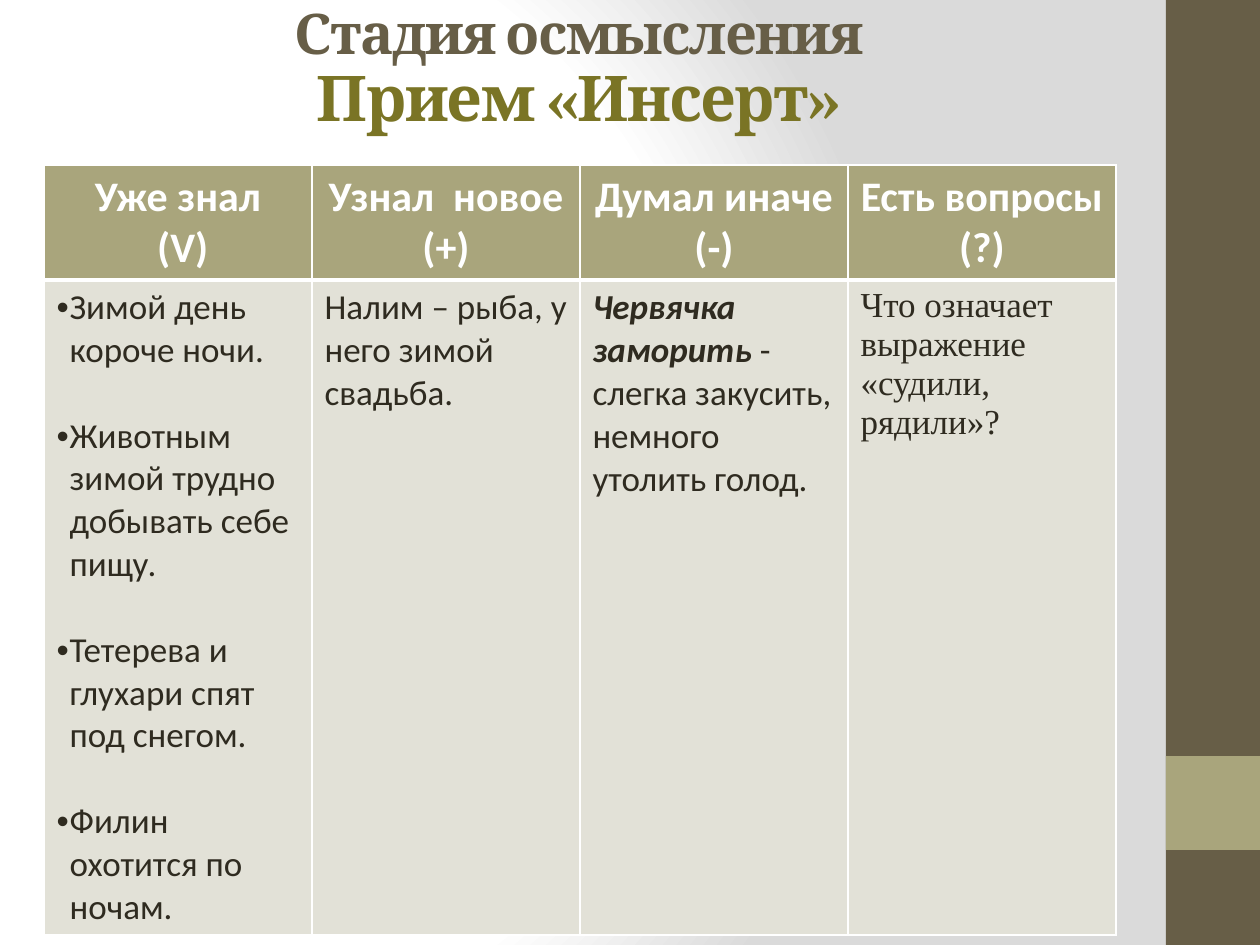
from pptx import Presentation, oxml
from pptx import util as u
from pptx.dml.color import RGBColor
from pptx.enum import shapes, text
from pptx.oxml import ns

SCALE = 914400 / 126
DARK, OLIVE, GREEN = "675E47", "A9A57C", "7A7425"
PALE, INK, WHITE = "E2E1D7", "2F2B20", "FFFFFF"


def px(n):
    return u.Emu(round(n * SCALE))


def rgb(value):
    return RGBColor.from_string(value)


def xml(tag, inner="", **attrs):
    pairs = " ".join(f'{k}="{v}"' for k, v in attrs.items())
    return oxml.parse_xml(f'<a:{tag} {ns.nsdecls("a")} {pairs}>{inner}</a:{tag}>')


class Deck:
    body = dict(name="Calibri", size=u.Pt(20), color=INK, bold=False)
    head = dict(body, size=u.Pt(24), color=WHITE, bold=True)
    title = dict(name="Cambria", size=u.Pt(32), color=DARK, bold=True)

    def __init__(self, width, height):
        self.prs = Presentation()
        self.prs.slide_width, self.prs.slide_height = px(width), px(height)
        self.s = self.prs.slides.add_slide(self.prs.slide_layouts[6])

    def background(self, stops, **center):
        fill = self.s.background.fill
        fill.solid()
        gs = "".join(f'<a:gs pos="{pos * 1000}"><a:srgbClr val="{c}"/></a:gs>' for pos, c in stops)
        rect = " ".join(f'{k}="{v * 1000}"' for k, v in center.items())
        grad = xml("gradFill", f'<a:gsLst>{gs}</a:gsLst><a:path path="circle">'
                   f'<a:fillToRect {rect}/></a:path>', rotWithShape=1)
        solid = self.s.element.find(".//" + ns.qn("a:solidFill"))
        solid.getparent().replace(solid, grad)

    def rect(self, x, y, w, h, color):
        sp = self.s.shapes.add_shape(shapes.MSO_SHAPE.RECTANGLE, px(x), px(y), px(w), px(h))
        sp.shadow.inherit = False
        sp.fill.solid()
        sp.fill.fore_color.rgb = rgb(color)
        sp.line.fill.background()

    def run(self, p, words, style):
        r = p.add_run()
        r.text = words
        for key, value in style.items():
            if key == "color":
                r.font.color.rgb = rgb(value)
            else:
                setattr(r.font, key, value)
        return r

    def heading(self, x, y, w, h, lines):
        tf = self.s.shapes.add_textbox(px(x), px(y), px(w), px(h)).text_frame
        tf.word_wrap = True
        tf.vertical_anchor = text.MSO_ANCHOR.MIDDLE
        p = tf.paragraphs[0]
        p.alignment, p.line_spacing = text.PP_ALIGN.CENTER, 0.9
        for i, (words, style) in enumerate(lines):
            if i:
                p.add_line_break()
            r = self.run(p, words, dict(self.title, **style))
            r.font._element.set("spc", "-100")

    def cell(self, cell, paragraphs, style, fill, top, bottom, bullets=False, **fmt):
        tf = cell.text_frame
        for i, runs in enumerate(paragraphs):
            p = tf.add_paragraph() if i else tf.paragraphs[0]
            for key, value in fmt.items():
                setattr(p, key, value)
            if bullets:
                if i:
                    p.space_before = u.Pt(24.4)
                pPr = p._p.get_or_add_pPr()
                pPr.set("marL", str(px(13)))
                pPr.set("indent", str(-px(13)))
                pPr.append(xml("buFont", typeface="Arial"))
                pPr.append(xml("buChar", char="•"))
            for words, extra in runs:
                self.run(p, words, dict(style, **extra))
        tcPr = cell._tc.get_or_add_tcPr()
        for side, width in zip("LRTB", (1, 1, top, bottom)):
            tcPr.append(xml(f"ln{side}", f'<a:solidFill><a:srgbClr val="{WHITE}"/></a:solidFill>',
                            w=u.Pt(width)))
        cell.fill.solid()
        cell.fill.fore_color.rgb = rgb(fill)

    def table(self, x, y, col_width, row_heights, columns):
        frame = self.s.shapes.add_table(2, len(columns), px(x), px(y),
                                        px(col_width * len(columns)), px(sum(row_heights)))
        tbl = frame.table
        for row, height in zip(tbl.rows, row_heights):
            row.height = px(height)
        for i, (header, content) in enumerate(columns):
            tbl.columns[i].width = px(col_width)
            self.cell(tbl.cell(0, i), [[(line, {})] for line in header], self.head, OLIVE, 1, 3,
                      alignment=text.PP_ALIGN.CENTER)
            self.cell(tbl.cell(1, i), content, self.body, PALE, 3, 1, bullets=len(content) > 1)


def main():
    deck = Deck(1260, 945)
    deck.background([(0, WHITE), (75, WHITE), (100, "DADADA")], l=20, t=50, r=100, b=50)
    deck.rect(1166, 0, 94, 945, DARK)
    deck.rect(1166, 756, 94, 94, OLIVE)
    deck.heading(54, -4, 1050, 149, [
        ("Стадия осмысления", {}),
        ("Прием «Инсерт»", dict(size=u.Pt(36), color=GREEN)),
    ])
    facts = ["Зимой день короче ночи.",
             "Животным зимой трудно добывать себе пищу.",
             "Тетерева и глухари спят под снегом.",
             "Филин охотится по ночам."]
    deck.table(44, 165, 268, (115, 655), [
        (("Уже знал", " (V)"), [[(fact, {})] for fact in facts]),
        (("Узнал  новое ", "(+)"), [[("Налим – рыба, у него зимой свадьба.", {})]]),
        (("Думал иначе ", "(-)"), [[("Червячка заморить ", dict(bold=True, italic=True)),
                                    ("- слегка закусить, немного утолить голод.", {})]]),
        (("Есть вопросы ", "(?)"), [[("Что означает выражение «судили, рядили»?",
                                      dict(name="Times New Roman"))]]),
    ])
    deck.prs.save("out.pptx")


if __name__ == "__main__":
    main()
